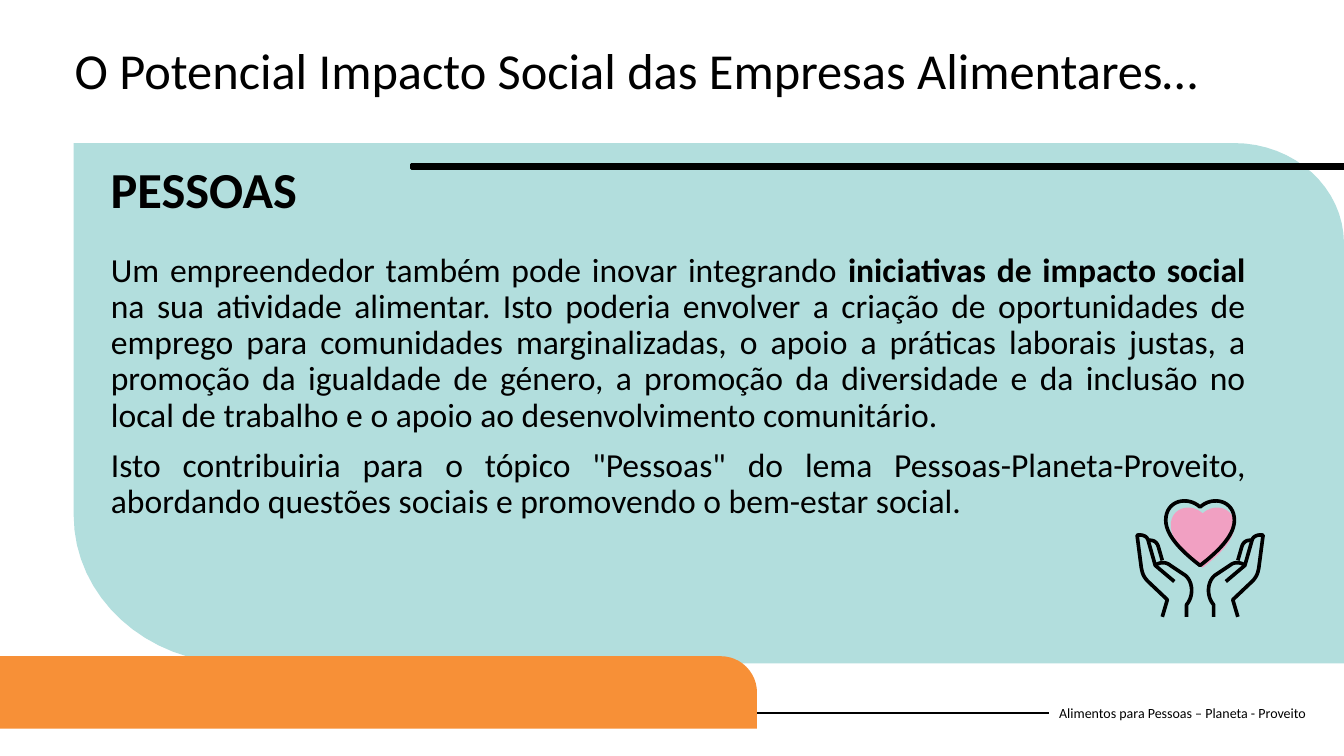
from dataclasses import dataclass
from typing import NamedTuple, Optional

from lxml.etree import SubElement
from pptx import Presentation
from pptx.dml.color import RGBColor
from pptx.enum.shapes import MSO_CONNECTOR as Connector, MSO_SHAPE as Preset
from pptx.enum.text import MSO_ANCHOR as Anchor, MSO_AUTO_SIZE as AutoSize, PP_ALIGN as Align
from pptx.oxml.ns import qn
from pptx.util import Pt


@dataclass(frozen=True)
class Theme:
    font: str = "Calibri"
    ink: str = "000000"
    panel: str = "B2DEDD"
    band: str = "F79037"
    heart: str = "F1A0C2"
    heading_size: float = 36
    body_size: float = 24
    footer_size: float = 10


class Point(NamedTuple):
    x: float
    y: float


class Box(NamedTuple):
    left: float
    top: float
    width: float
    height: float


class Run(NamedTuple):
    text: str
    bold: bool = False


@dataclass(frozen=True)
class Contour:
    """A start point, then segments: one point for a line, three for a curve."""
    start: tuple
    segments: tuple
    closed: bool = False


@dataclass(frozen=True)
class Outline:
    contours: tuple
    origin: Point = Point(0, 0)
    scale_x: float = 1
    scale_y: float = 1
    fill: Optional[str] = None
    stroke: Optional[str] = None
    weight: float = 2.6


THEME = Theme()
CURVE_STEPS = 16
ICON_ORIGIN = Point(857.2, 356.4)

PANEL = Contour((52.6, 102.2), (
    ((881.3, 102.2),),
    ((924.5, 102.2), (960, 133.9), (960, 174.2)),
    ((960, 473.8),),
    ((168.5, 473.8),),
    ((104.4, 473.8), (52.6, 426.2), (52.6, 367.9)),
), closed=True)

HEART = Contour((0, 5.8), (
    ((9, -2.5), (24.5, 1), (24.5, 15.2)),
    ((24.5, 27), (11, 39), (0, 47.5)),
    ((-11, 39), (-24.5, 27), (-24.5, 15.2)),
    ((-24.5, 1), (-9, -2.5), (0, 5.8)),
), closed=True)

THUMB = Contour((9.7, 84.2), (
    ((9.7, 75.6),),
    ((4.7, 69.8), (4.7, 59.8), (10.4, 54.7)),
    ((21.2, 47.5),),
    ((24.8, 44.6), (28.4, 45.4), (31.3, 46.8)),
))
PALM = Contour((27, 84.2), (
    ((23.4, 72),),
    ((37.1, 59),),
    ((40.7, 55.4), (41.4, 52.6), (42.1, 48.2)),
    ((45, 25.9),),
    ((41.4, 25.2), (37.8, 26.6), (37.1, 29.5)),
    ((32, 47.5),),
    ((18.4, 59),),
))
FINGER = Contour((27, 43.9), (
    ((29.9, 33.8),),
    ((31.3, 30.2), (33.5, 29.5), (36.4, 29.5)),
))
HAND = (THUMB, PALM, FINGER)

ICON = (
    Outline((HEART,), Point(ICON_ORIGIN.x + 1.9, ICON_ORIGIN.y + 4.9), 0.93, 0.93,
            fill=THEME.heart),
    Outline(HAND, ICON_ORIGIN, stroke=THEME.ink),
    Outline(HAND, ICON_ORIGIN, scale_x=-1, stroke=THEME.ink),
    Outline((HEART,), ICON_ORIGIN, stroke=THEME.ink),
)

TITLE = "O Potencial Impacto Social das Empresas Alimentares…"
TOPIC = "PESSOAS"
FOOTER = "Alimentos para Pessoas – Planeta - Proveito"
BODY = (
    (Run("Um empreendedor também pode inovar integrando "),
     Run("iniciativas de impacto social", bold=True),
     Run(" na sua atividade alimentar. Isto poderia envolver a criação de oportunidades de "
         "emprego para comunidades marginalizadas, o apoio a práticas laborais justas, a "
         "promoção da igualdade de género, a promoção da diversidade e da inclusão no local "
         "de trabalho e o apoio ao desenvolvimento comunitário.")),
    (Run('Isto contribuiria para o tópico "Pessoas" do lema Pessoas-Planeta-Proveito, '
         "abordando questões sociais e promovendo o bem-estar social."),),
)


def color(code: str) -> RGBColor:
    return RGBColor.from_string(code)


def flatten(contour: Contour) -> list[Point]:
    """Turn lines and cubic curves into a list of points."""
    points = [Point(*contour.start)]
    for segment in contour.segments:
        if len(segment) == 1:
            points.append(Point(*segment[0]))
            continue
        corners = (points[-1], *segment)
        for step in range(1, CURVE_STEPS + 1):
            t = step / CURVE_STEPS
            weights = ((1 - t) ** 3, 3 * t * (1 - t) ** 2, 3 * t * t * (1 - t), t ** 3)
            points.append(Point(*(sum(w * c[axis] for w, c in zip(weights, corners))
                                  for axis in (0, 1))))
    return points


def paint(shape, fill: Optional[str], stroke: Optional[str], weight: float) -> None:
    shape.shadow.inherit = False
    if fill:
        shape.fill.solid()
        shape.fill.fore_color.rgb = color(fill)
    else:
        shape.fill.background()
    if stroke:
        shape.line.color.rgb = color(stroke)
        shape.line.width = Pt(weight)
    else:
        shape.line.fill.background()


def draw_outline(slide, outline: Outline) -> None:
    builder = None
    for contour in outline.contours:
        first, *rest = [(Pt(outline.origin.x + p.x * outline.scale_x),
                         Pt(outline.origin.y + p.y * outline.scale_y))
                        for p in flatten(contour)]
        if builder is None:
            builder = slide.shapes.build_freeform(*first)
        else:
            builder.move_to(*first)
        builder.add_line_segments(rest, close=contour.closed)
    paint(builder.convert_to_shape(), outline.fill, outline.stroke, outline.weight)


def draw_preset(slide, preset, box: Box, fill: str, stroke: Optional[str] = None,
                weight: float = 0):
    shape = slide.shapes.add_shape(preset, *map(Pt, box))
    paint(shape, fill, stroke, weight)
    return shape


def draw_line(slide, start: Point, end: Point, weight: float) -> None:
    line = slide.shapes.add_connector(Connector.STRAIGHT, *map(Pt, (*start, *end)))
    line.line.color.rgb = color(THEME.ink)
    line.line.width = Pt(weight)
    SubElement(line.element.spPr, qn("a:effectLst"))


def write(holder, box: Box, paragraphs, *, size: float, align=Align.LEFT, anchor=Anchor.TOP,
          line_spacing: float = 1.0, space_before: float = 0) -> None:
    """Place a text holder and fill it with unbulleted paragraphs of runs."""
    holder.left, holder.top, holder.width, holder.height = map(Pt, box)
    frame = holder.text_frame
    frame.word_wrap, frame.auto_size = True, AutoSize.NONE
    frame.vertical_anchor = anchor
    for index, runs in enumerate(paragraphs):
        paragraph = frame.add_paragraph() if index else frame.paragraphs[0]
        paragraph.alignment = align
        paragraph.line_spacing = line_spacing
        paragraph.space_before = Pt(space_before)
        properties = paragraph._p.get_or_add_pPr()
        properties.set("marL", "0")
        properties.set("indent", "0")
        SubElement(properties, qn("a:buNone"))
        for part in runs:
            run = paragraph.add_run()
            run.text = part.text
            run.font.name, run.font.size, run.font.bold = THEME.font, Pt(size), part.bold
            run.font.color.rgb = color(THEME.ink)


def main() -> None:
    deck = Presentation()
    deck.slide_width, deck.slide_height = Pt(960), Pt(540)
    slide = deck.slides.add_slide(deck.slide_layouts[1])
    title, body = slide.shapes.title, slide.placeholders[1]

    footer = slide.shapes.add_textbox(0, 0, 0, 0)
    write(footer, Box(749.5, 494.6, 196.6, 28.8), [[Run(FOOTER)]],
          size=THEME.footer_size, anchor=Anchor.MIDDLE)
    draw_line(slide, Point(0, 509), Point(749.5, 509), 1.5)
    draw_outline(slide, Outline((PANEL,), fill=THEME.panel))
    band = draw_preset(slide, Preset.ROUND_1_RECTANGLE, Box(0, 468.7, 540.7, 51.8), THEME.band)
    band.adjustments[0] = 0.5
    draw_preset(slide, Preset.RECTANGLE, Box(293.8, 117.4, 666.2, 2.9), THEME.ink, THEME.ink, 1.93)

    for holder in (body, title):  # text goes in front of the panel
        slide.shapes.element.append(holder.element)
    write(body, Box(72, 177.1, 825.1, 270.7), BODY, size=THEME.body_size,
          align=Align.JUSTIFY, line_spacing=0.9, space_before=10)
    write(title, Box(46.1, 29.5, 966.2, 63.4), [[Run(TITLE)]], size=THEME.heading_size,
          line_spacing=0.9, space_before=10)
    for outline in ICON:
        draw_outline(slide, outline)
    topic = slide.shapes.add_textbox(0, 0, 0, 0)
    write(topic, Box(72, 109.4, 192.2, 51.1), [[Run(TOPIC, bold=True)]], size=THEME.heading_size)
    deck.save("out.pptx")


if __name__ == "__main__":
    main()
